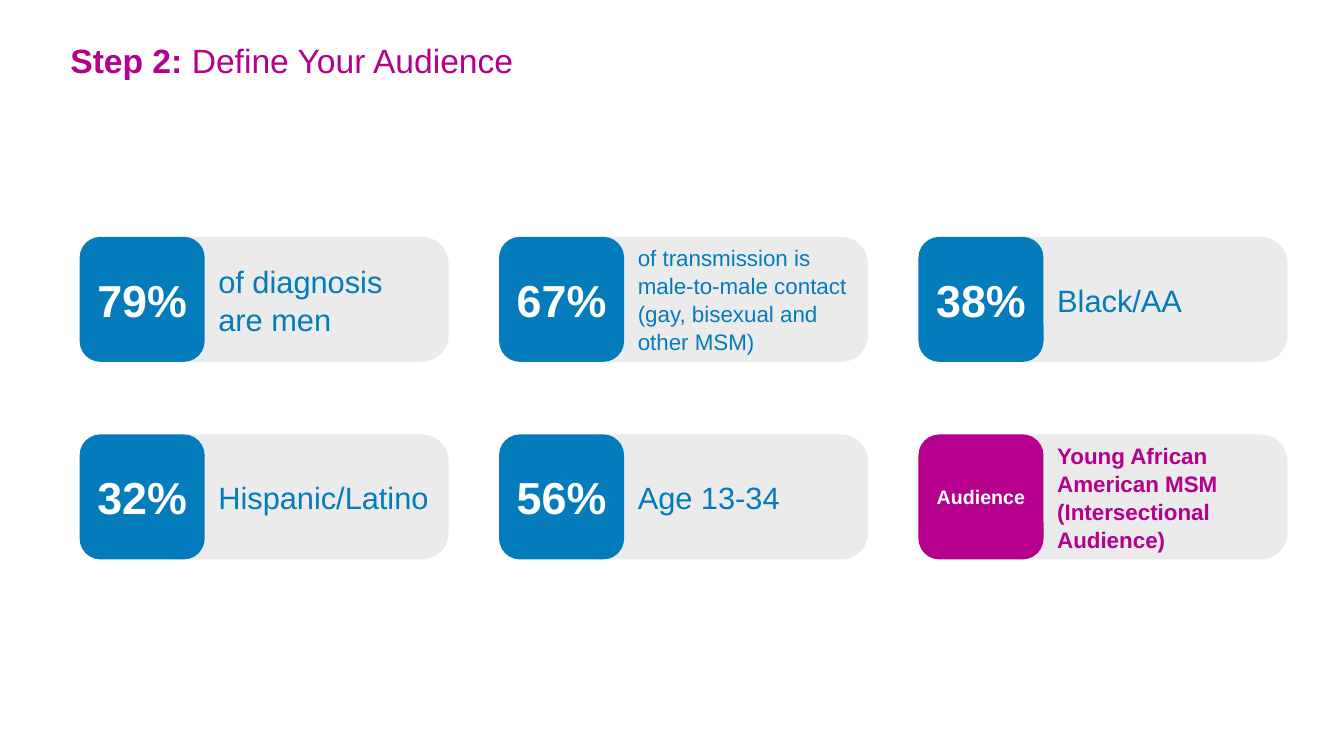
from pptx import Presentation
from pptx.dml.color import RGBColor
from pptx.enum.shapes import MSO_SHAPE
from pptx.enum.text import MSO_ANCHOR, PP_ALIGN
from pptx.util import Inches, Pt

ROUND = MSO_SHAPE.ROUNDED_RECTANGLE
MIDDLE = MSO_ANCHOR.MIDDLE
LEFT, CENTER = PP_ALIGN.LEFT, PP_ALIGN.CENTER

WHITE = RGBColor(0xFE, 0xFF, 0xFE)
GRAY = RGBColor(0xEB, 0xEB, 0xEB)
BLUE = RGBColor(0x04, 0x7B, 0xBA)
PINK = RGBColor(0xB4, 0x00, 0x8C)

FONT = "Arial"
COLS = 3
X, Y = 0.79, 2.35            # top left corner of the grid
STEP_X, STEP_Y = 4.16, 1.96  # distance between cards
SIDE = 1.24                  # badge side and card height
SHIFT, WIDE = 0.7, 2.96      # gray panel: offset from badge, width

# badge, badge size, lines, text size, badge colour, bold text
CARDS = [
    ("79%", 32, ["of diagnosis are men"], 22, BLUE, False),
    ("67%", 32, ["of transmission is",
                 "male-to-male contact (gay, bisexual and",
                 "other MSM)"], 16, BLUE, False),
    ("38%", 32, ["Black/AA"], 22, BLUE, False),
    ("32%", 32, ["Hispanic/Latino"], 22, BLUE, False),
    ("56%", 32, ["Age 13-34"], 22, BLUE, False),
    ("Audience", 14, ["Young African American MSM (Intersectional Audience)"],
     16, PINK, True),
]


def style(para, size, color, bold=None):
    font = para.font
    font.name, font.size, font.bold = FONT, Pt(size), bold
    font.color.rgb = color


def add_box(group, left, top, width, fill):
    box = group.shapes.add_shape(ROUND, Inches(left), Inches(top),
                                 Inches(width), Inches(SIDE))
    box.shadow.inherit = False
    box.fill.solid()
    box.fill.fore_color.rgb = fill
    box.line.fill.background()
    box.text_frame.word_wrap = True
    box.text_frame.vertical_anchor = MIDDLE
    return box


def add_card(slide, left, top, badge, big, lines, size, color, bold):
    group = slide.shapes.add_group_shape()
    panel = add_box(group, left + SHIFT, top, WIDE, GRAY)
    panel.adjustments[0] = 0.214
    frame = panel.text_frame
    frame.text = "\n".join(lines)
    for para in frame.paragraphs:
        props = para._p.get_or_add_pPr()
        props.set("marL", str(Inches(0.5)))
        props.set("indent", "0")
        para.level = 1
        para.alignment = LEFT
        para.line_spacing = 1.04
        style(para, size, color, bold)

    square = add_box(group, left, top, SIDE, color)
    square.text_frame.text = badge
    para = square.text_frame.paragraphs[0]
    para.alignment = CENTER
    style(para, big, WHITE, True)


def add_title(slide, step, name):
    box = slide.shapes.add_textbox(Inches(0.6), Inches(-0.1),
                                   Inches(11.5), Inches(1.45))
    frame = box.text_frame
    frame.word_wrap = True
    frame.vertical_anchor = MIDDLE
    para = frame.paragraphs[0]
    para.line_spacing = 0.9
    style(para, 24, PINK)
    for text, bold in ((step, True), (name, False)):
        run = para.add_run()
        run.text = text
        run.font.bold = bold


def main():
    deck = Presentation()
    deck.slide_width, deck.slide_height = Inches(13.33), Inches(7.5)
    slide = deck.slides.add_slide(deck.slide_layouts[6])
    back = slide.background.fill
    back.solid()
    back.fore_color.rgb = WHITE
    add_title(slide, "Step 2: ", "Define Your Audience")
    for i, card in enumerate(CARDS):
        row, col = divmod(i, COLS)
        add_card(slide, X + col * STEP_X, Y + row * STEP_Y, *card)
    deck.save("out.pptx")


if __name__ == "__main__":
    main()
